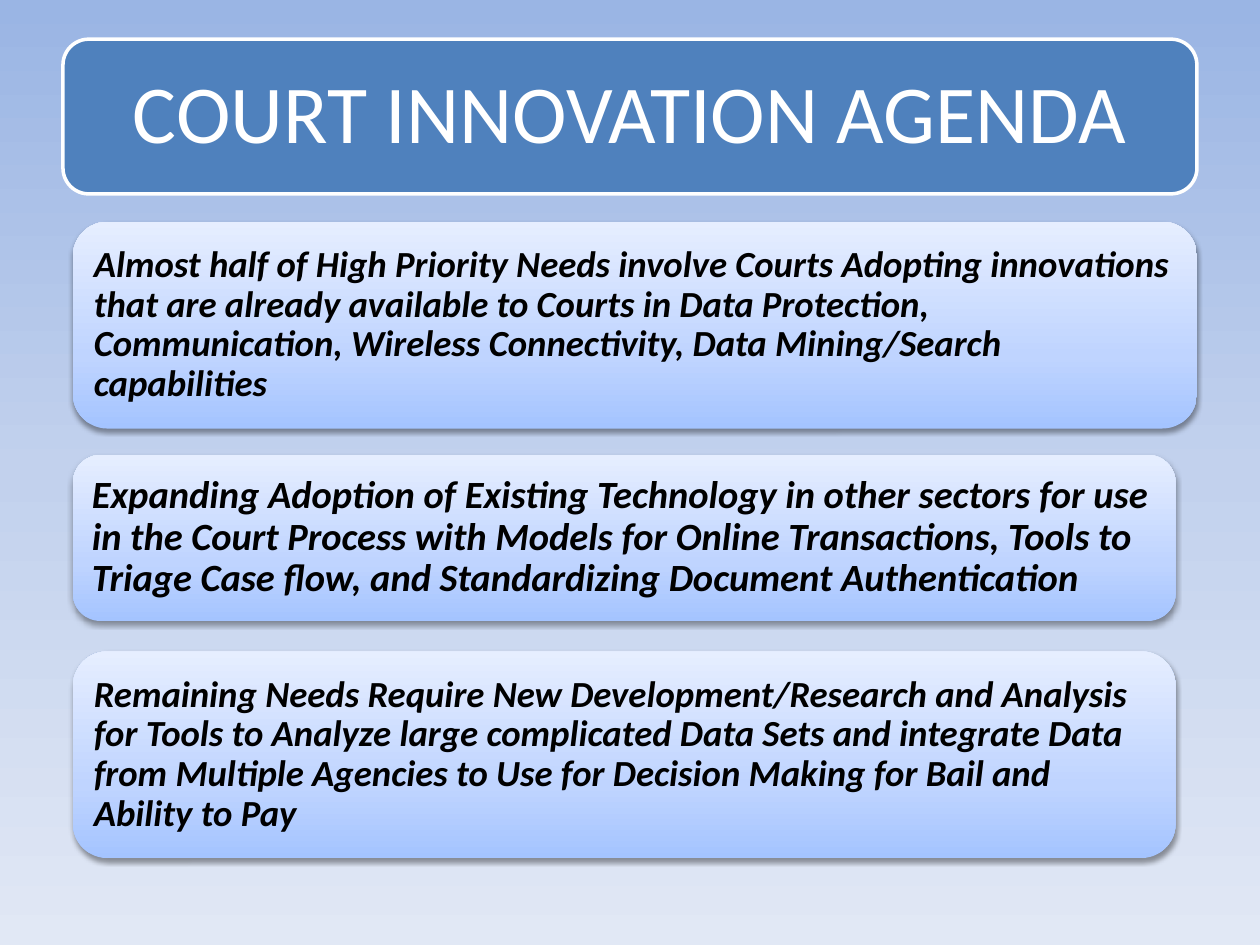
from lxml.etree import SubElement
from pptx import Presentation
from pptx.dml.color import RGBColor
from pptx.enum.shapes import MSO_SHAPE as Shape
from pptx.enum.text import MSO_ANCHOR as Anchor, PP_ALIGN as Align
from pptx.oxml.ns import qn
from pptx.util import Cm, Pt


def color(hex_code):
    return RGBColor.from_string(hex_code)


class AgendaSlide:
    font = "Calibri"
    backdrop = [(0, "9AB5E4"), (50, "C2D1ED"), (100, "E1E8F5")]
    card_stops = [(0, "A4C4FF"), (35, "BFD4FF"), (100, "E6EEFF")]

    def __init__(self, deck):
        self.slide = deck.slides.add_slide(deck.slide_layouts[6])
        self.gradient(self.slide.background.fill, self.slide._element, self.backdrop, 270)

    def gradient(self, fill, owner, stops, angle):
        fill.gradient()
        fill.gradient_angle = angle
        stop_list = owner.find(".//" + qn("a:gsLst"))
        stop_list.clear()
        for position, hex_code in stops:
            stop = SubElement(stop_list, qn("a:gs"), pos=str(position * 1000))
            SubElement(stop, qn("a:srgbClr"), val=hex_code)

    def shadow(self, panel):
        effects = panel._element.spPr.find(qn("a:effectLst"))
        outer = SubElement(effects, qn("a:outerShdw"), blurRad=str(Pt(3.1)),
                           dist=str(Pt(1.6)), dir="5400000", rotWithShape="0")
        black = SubElement(outer, qn("a:srgbClr"), val="000000")
        SubElement(black, qn("a:alpha"), val="38000")

    def panel(self, text, left, top, width, height, size, ink, inset, align):
        panel = self.slide.shapes.add_shape(
            Shape.ROUNDED_RECTANGLE, Cm(left), Cm(top), Cm(width), Cm(height))
        panel.shadow.inherit = False
        frame = panel.text_frame
        frame.word_wrap = True
        frame.vertical_anchor = Anchor.MIDDLE
        frame.margin_left = frame.margin_right = Cm(inset)
        frame.margin_top = frame.margin_bottom = Cm(inset)
        paragraph = frame.paragraphs[0]
        paragraph.text = text
        paragraph.alignment = align
        paragraph.line_spacing = 0.9
        paragraph.font.name = self.font
        paragraph.font.size = Pt(size)
        paragraph.font.color.rgb = color(ink)
        return panel

    def title(self, text, left, top, width, height):
        banner = self.panel(text, left, top, width, height, 47, "FFFFFF", 0.5, Align.CENTER)
        banner.fill.solid()
        banner.fill.fore_color.rgb = color("4F81BD")
        banner.line.color.rgb = color("FFFFFF")
        banner.line.width = Pt(2)

    def card(self, text, top, width, height, size):
        card = self.panel(text, 1.47, top, width, height, size, "000000", 0.22, Align.LEFT)
        self.gradient(card.fill, card._element, self.card_stops, 90)
        card.line.fill.background()
        self.shadow(card)
        emphasis = card.text_frame.paragraphs[0].font
        emphasis.bold = emphasis.italic = True


def main():
    deck = Presentation()
    deck.slide_width, deck.slide_height = Cm(25.4), Cm(19.05)
    agenda = AgendaSlide(deck)
    agenda.title("COURT INNOVATION AGENDA", 1.27, 0.79, 22.86, 3.12)
    needs = [
        ("Almost half of High Priority Needs involve Courts Adopting innovations that are "
         "already available to Courts in Data Protection, Communication, Wireless "
         "Connectivity, Data Mining/Search capabilities", 4.47, 22.66, 4.17, 21),
        ("Expanding Adoption of Existing Technology in other sectors for use in the Court "
         "Process with Models for Online Transactions, Tools to Triage Case flow, and "
         "Standardizing Document Authentication", 9.17, 22.23, 3.35, 22),
        ("Remaining Needs Require New Development/Research and Analysis for Tools to "
         "Analyze large complicated Data Sets and integrate Data from Multiple Agencies "
         "to Use for Decision Making for Bail and Ability to Pay", 13.13, 22.23, 4.17, 21),
    ]
    for need in needs:
        agenda.card(*need)
    deck.save("out.pptx")


if __name__ == "__main__":
    main()
